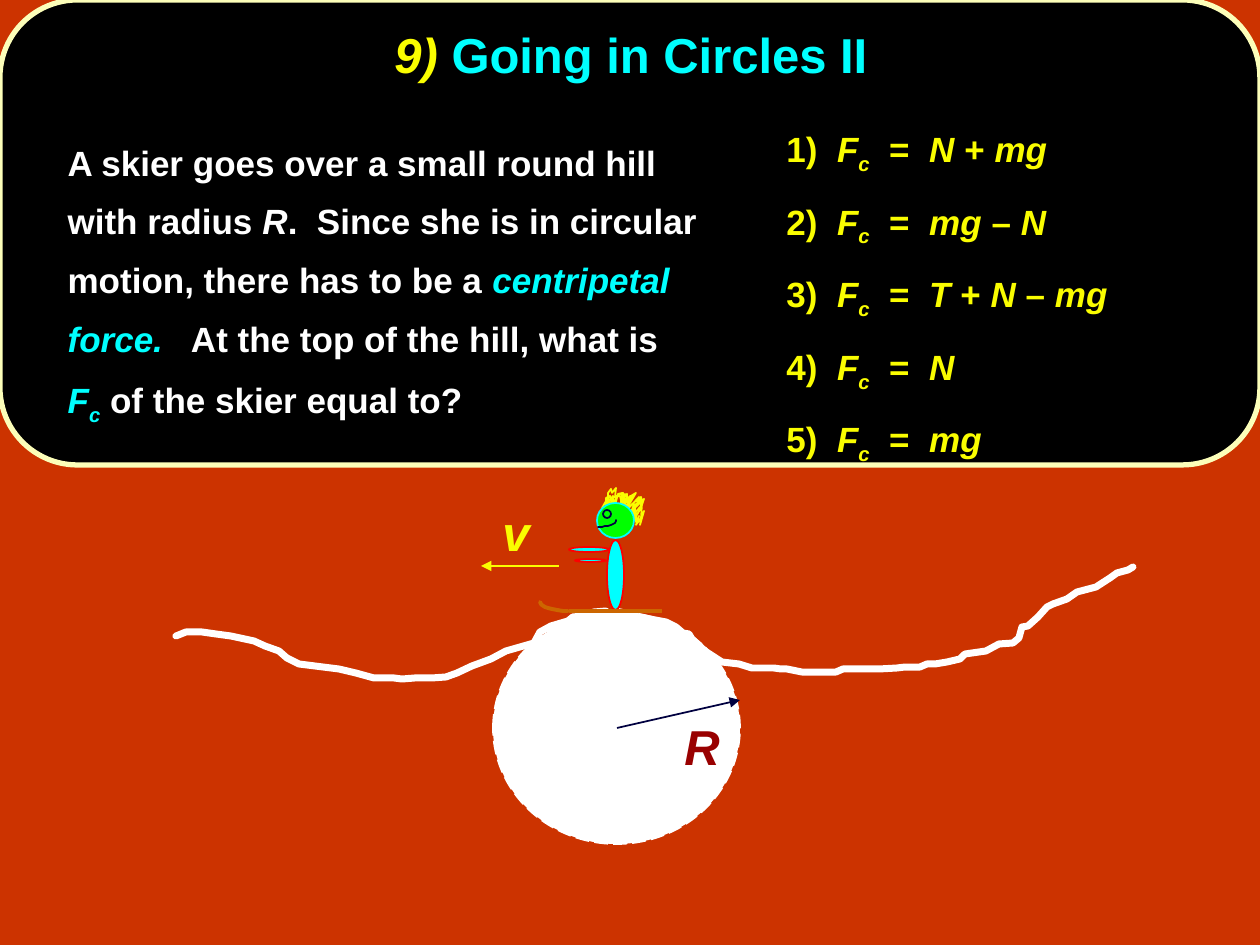
"""Builds the quiz slide about a skier going over a round hill."""
from math import cos, pi, sin

from lxml import etree
from pptx import Presentation
from pptx.dml.color import RGBColor
from pptx.enum.dml import MSO_LINE
from pptx.enum.shapes import MSO_CONNECTOR, MSO_SHAPE
from pptx.enum.text import MSO_ANCHOR, MSO_AUTO_SIZE, PP_ALIGN
from pptx.oxml.ns import qn
from pptx.util import Emu, Pt

ELLIPSE, ROUNDED = MSO_SHAPE.OVAL, MSO_SHAPE.ROUNDED_RECTANGLE
STRAIGHT, LONG_DASH = MSO_CONNECTOR.STRAIGHT, MSO_LINE.LONG_DASH
MIDDLE, NO_FIT = MSO_ANCHOR.MIDDLE, MSO_AUTO_SIZE.NONE
CENTER, LEFT = PP_ALIGN.CENTER, PP_ALIGN.LEFT
SCALE = 914400 / 126
YELLOW, CYAN, WHITE, RED, NAVY, BROWN = "FAFD00", "00FFFF", "FFFFFF", "FC0000", "000040", "CC6600"

LEFT_SLOPE = [
    (430, 0), (418, 1), (407, 5), (397, 6), (392, 10), (375, 15), (364, 21), (358, 32),
    (330, 40), (315, 48), (296, 55), (281, 62), (270, 66), (256, 67), (239, 67), (226, 68),
    (218, 67), (198, 67), (180, 62), (163, 58), (123, 53), (111, 47), (103, 40), (89, 35),
    (78, 30), (55, 25), (40, 23), (26, 21), (10, 21), (0, 25)]
RIGHT_SLOPE = [
    (0, 44), (13, 47), (18, 49), (34, 52), (50, 55), (60, 60), (67, 66), (73, 67), (76, 72),
    (89, 84), (106, 95), (123, 97), (136, 101), (158, 101), (165, 102), (171, 102), (186, 105),
    (220, 105), (227, 102), (263, 102), (281, 101), (289, 100), (304, 100), (311, 97),
    (319, 97), (331, 95), (344, 92), (349, 87), (370, 84), (383, 77), (397, 76), (403, 71),
    (406, 60), (412, 59), (422, 50), (431, 40), (437, 37), (451, 32), (461, 25), (480, 20),
    (494, 11), (501, 6), (512, 3), (517, 0)]
HAIR = [
    (0, 20), (4, 13), (4, 16), (11, 8), (11, 19), (14, 9), (13, 18), (16, 6), (21, 5), (19, 14),
    (34, 5), (28, 15), (30, 9), (23, 25), (24, 13), (19, 20), (21, 11), (19, 15), (23, 6),
    (19, 13), (18, 8), (8, 10), (8, 8), (4, 10), (4, 18), (10, 11), (10, 20), (23, 13),
    (20, 24), (34, 13), (39, 11), (29, 23), (34, 16), (32, 26), (39, 18), (29, 30), (29, 35),
    (34, 25), (34, 34), (37, 28), (34, 37), (39, 30), (38, 37), (42, 23), (39, 30), (40, 16),
    (38, 21), (40, 13), (39, 9), (33, 20), (29, 25), (32, 16), (29, 32), (33, 21), (32, 32),
    (39, 20), (42, 11), (34, 19), (37, 9), (24, 23), (28, 8), (25, 14), (25, 6), (19, 15),
    (20, 5), (13, 9), (14, 0), (10, 5), (9, 1), (6, 5), (6, 15), (13, 15)]


def px(*lengths):
    """Turn px lengths into EMU."""
    return [Emu(round(length * SCALE)) for length in lengths]


def color(code):
    """Turn a hex string into a colour."""
    return RGBColor.from_string(code)


def set_line(shape, code, width):
    """Colour and size the outline of a shape."""
    shape.line.color.rgb = color(code)
    shape.line.width = Pt(width)


def add_preset(parent, kind, box, fill, line, width=1):
    """Add a flat preset shape."""
    shape = parent.shapes.add_shape(kind, *px(*box))
    shape.shadow.inherit = False
    if fill:
        shape.fill.solid()
        shape.fill.fore_color.rgb = color(fill)
    else:
        shape.fill.background()
    set_line(shape, line, width)
    return shape


def add_stroke(parent, left, top, points, line, width):
    """Add an open unfilled outline through the points."""
    builder = parent.shapes.build_freeform(*points[0], scale=SCALE)
    builder.add_line_segments(points[1:], close=False)
    shape = builder.convert_to_shape(*px(left, top))
    shape.shadow.inherit = False
    shape.fill.background()
    set_line(shape, line, width)
    shape.element.spPr.find(qn("a:ln")).set("cap", "rnd")


def quarter_arc(center_x, width, height, start):
    """Return points of a quarter ellipse that begins at the start angle."""
    angles = [start + step * pi / 16 for step in range(9)]
    return [(center_x + width * cos(angle), height * sin(angle)) for angle in angles]


def add_line(parent, start, end, line, width=1, arrow=False):
    """Add a straight line, with an arrowhead at its end if asked."""
    connector = parent.shapes.add_connector(STRAIGHT, *px(*start, *end))
    set_line(connector, line, width)
    if arrow:
        etree.SubElement(connector.element.spPr.find(qn("a:ln")), qn("a:tailEnd"), type="triangle")
    etree.SubElement(connector.element.spPr, qn("a:effectLst"))


def write_para(para, spans, size, spacing, before=0, margin=0, indent=0, align=LEFT):
    """Fill a paragraph with (text, colour, italic, subscript) spans."""
    para.alignment = align
    para.line_spacing = spacing
    para.space_before = Pt(0)
    props = para._p.get_or_add_pPr()
    gap = props.find(qn("a:spcBef"))
    gap.remove(gap[0])
    etree.SubElement(gap, qn("a:spcPct"), val=str(before * 1000))
    etree.SubElement(props, qn("a:buNone"))
    for name, length in zip(("marL", "indent"), px(margin, indent)):
        props.set(name, str(length))
    for text, code, italic, subscript in spans:
        span = para.add_run()
        span.text = text
        font = span.font
        font.name, font.size, font.bold, font.italic = "Arial", Pt(size), True, italic
        font.color.rgb = color(code)
        if subscript:
            span._r.get_or_add_rPr().set("baseline", "-25000")


def place(shape, box):
    """Move a placeholder to the front and to its box."""
    shape.left, shape.top, shape.width, shape.height = px(*box)
    shape.element.getparent().append(shape.element)
    shape.text_frame.auto_size = NO_FIT
    return shape.text_frame


def add_label(parent, box, text, code):
    """Add a one-letter label."""
    frame = parent.shapes.add_textbox(*px(*box)).text_frame
    frame.word_wrap = False
    write_para(frame.paragraphs[0], [(text, code, True, False)], 28, 0.9, 30)


def add_hill(parent, left, top):
    """Add the round hill with its radius and the slopes on both sides."""
    hill = add_preset(parent, ELLIPSE, (left + 317, top + 1, 247, 232), WHITE, WHITE)
    hill.line.dash_style = LONG_DASH
    add_line(parent, (left + 441, top + 117), (left + 564, top + 89), NAVY, arrow=True)
    add_label(parent, (left + 496, top + 106, 60, 66), "R", "990000")
    add_stroke(parent, left + 440, top - 44, RIGHT_SLOPE, WHITE, 4)
    add_stroke(parent, left, top, LEFT_SLOPE, WHITE, 4)


def add_skier(parent, left, top):
    """Add the skier on her ski with the velocity arrow."""
    add_preset(parent, ELLIPSE, (left + 67, top + 52, 17, 70), CYAN, RED)
    add_preset(parent, ELLIPSE, (left + 57, top + 15, 37, 35), "00FF00", CYAN)
    add_line(parent, (left + 29, top + 123), (left + 122, top + 123), BROWN, 2.25)
    add_stroke(parent, left, top + 114, quarter_arc(28, 28, 9, pi / 2), BROWN, 2.25)
    add_preset(parent, ELLIPSE, (left + 63, top + 22, 8, 8), None, NAVY)
    add_stroke(parent, left + 58, top + 32, quarter_arc(0, 18, 7, 0), NAVY, 1)
    add_preset(parent, ELLIPSE, (left + 29, top + 59, 40, 5), CYAN, RED)
    add_preset(parent, ELLIPSE, (left + 35, top + 71, 31, 3), CYAN, RED)
    add_line(parent, (left + 19, top + 78), (left - 59, top + 78), YELLOW, arrow=True)
    add_label(parent, (left - 50, top + 15, 52, 66), "v", YELLOW)


def add_options(page, box):
    """Add the numbered answers."""
    frame = page.shapes.add_textbox(*px(*box)).text_frame
    frame.word_wrap = True
    formulas = ["N + mg", "mg – N", "T + N – mg", "N", "mg"]
    for number, formula in enumerate(formulas, 1):
        spans = [(f"{number})  ", YELLOW, False, False), ("F", YELLOW, True, False),
                 ("c", YELLOW, True, True), ("  =  ", YELLOW, False, False)]
        for token in formula.split():
            letter = token.isalpha()
            spans.append((token if letter else f" {token} ", YELLOW, letter, False))
        para = frame.paragraphs[0] if number == 1 else frame.add_paragraph()
        write_para(para, spans, 20, 1.3, 30, 55, -55)


def add_question(page, box):
    """Fill the body placeholder with the question."""
    spans = [("A skier goes over a small round hill with radius ", WHITE, False, False),
             ("R", WHITE, True, False),
             (".  Since she is in circular motion, there has to be a ", WHITE, False, False),
             ("centripetal force.", CYAN, True, False),
             ("   At the top of the hill, what is ", WHITE, False, False),
             ("F", CYAN, True, False), ("c", CYAN, True, True),
             (" of the skier equal to?", WHITE, False, False)]
    frame = place(page.placeholders[1], box)
    write_para(frame.paragraphs[0], spans, 20, 1.4, 50, 55)


def add_title(page, box):
    """Fill the title placeholder."""
    frame = place(page.shapes.title, box)
    frame.vertical_anchor = MIDDLE
    spans = [("9) ", YELLOW, True, False), ("Going in Circles II", CYAN, False, False)]
    write_para(frame.paragraphs[0], spans, 28, 0.9, align=CENTER)


def main():
    """Build and save the deck."""
    deck = Presentation()
    deck.slide_width, deck.slide_height = px(1260, 945)
    page = deck.slides.add_slide(deck.slide_layouts[1])
    page.background.fill.solid()
    page.background.fill.fore_color.rgb = color("CC3300")
    scene = page.shapes.add_group_shape()
    add_stroke(scene, 602, 488, HAIR, YELLOW, 1)
    add_hill(scene, 176, 611)
    add_skier(scene, 540, 488)
    add_preset(page, ROUNDED, (0, 0, 1260, 465), "000000", "FCFEB9", 3)
    add_options(page, (774, 107, 456, 344))
    add_question(page, (0, 118, 712, 345))
    add_title(page, (128, 0, 1006, 116))
    deck.save("out.pptx")


if __name__ == "__main__":
    main()
